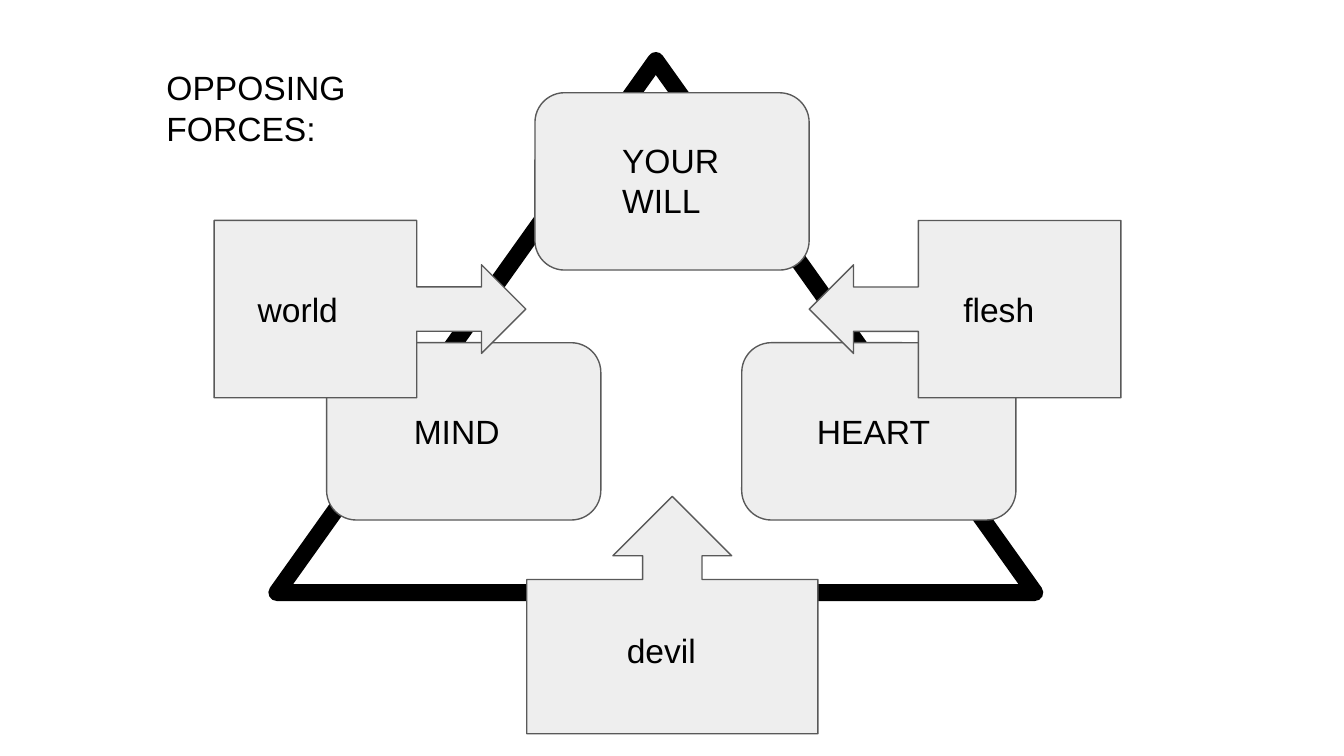
from typing import NamedTuple

from lxml import etree
from pptx import Presentation
from pptx.dml.color import RGBColor
from pptx.enum import shapes, text
from pptx.oxml import ns
from pptx.util import Pt

BLACK, WHITE, PALE, GREY = "000000", "FFFFFF", "EEEEEE", "595959"
SMALL_LABEL, LARGE_LABEL = 36, 58.3
BOX_WIDTH, BOX_HEIGHT = 146.9, 95
BOX_ROUNDING = [0.167]
CALLOUT_SHAPE = [0.25, 0.25, 0.25, 0.65]
LOWER_TOP, CALLOUT_TOP = 183.6, 118.1
LOWER_LABEL_TOP, SIDE_LABEL_TOP = 213.1, 147.6


class Area(NamedTuple):
    left: float
    top: float
    width: float
    height: float


class Force(NamedTuple):
    area: Area
    rotation: float


class Label(NamedTuple):
    words: str
    area: Area


TRIANGLE = Area(148.3, 32.4, 406.1, 285.1)

WILL_HEART_MIND = [
    Area(left, top, BOX_WIDTH, BOX_HEIGHT)
    for left, top in [(286.6, 49.7), (397.4, LOWER_TOP), (175, LOWER_TOP)]
]

SELF_LABELS = [
    Label("YOUR WILL", Area(326.2, 67.7, 67, LARGE_LABEL)),
    Label("MIND", Area(214.6, LOWER_LABEL_TOP, 67, SMALL_LABEL)),
    Label("HEART", Area(430.6, LOWER_LABEL_TOP, 81.4, SMALL_LABEL)),
]

FORCES = [
    Force(Area(114.7, CALLOUT_TOP, 167, BOX_HEIGHT), 0),
    Force(Area(433.5, CALLOUT_TOP, 167, BOX_HEIGHT), 180),
    Force(Area(296.6, 251.5, 127.2, 156), 270),
]

FORCE_LABELS = [
    Label("world", Area(131, SIDE_LABEL_TOP, 91.4, SMALL_LABEL)),
    Label("flesh", Area(509, SIDE_LABEL_TOP, 91.4, SMALL_LABEL)),
    Label("devil", Area(328.7, 330.5, 62.6, SMALL_LABEL)),
    Label("OPPOSING\nFORCES:", Area(82.1, 28.8, 140.4, LARGE_LABEL)),
]


def colour(hex_code: str) -> RGBColor:
    return RGBColor.from_string(hex_code)


def draw_shape(slide, kind, area: Area, adjustments: list[float],
               fill: str = PALE, line: str = GREY, weight: float = 0.75):
    shape = slide.shapes.add_shape(kind, *map(Pt, area))
    for index, value in enumerate(adjustments):
        shape.adjustments[index] = value
    shape.shadow.inherit = False
    shape.fill.solid()
    shape.fill.fore_color.rgb = colour(fill)
    shape.line.color.rgb = colour(line)
    shape.line.width = Pt(weight)
    outline = shape.element.spPr.find(ns.qn("a:ln"))
    etree.SubElement(outline, ns.qn("a:round"))
    return shape


def draw_label(slide, label: Label) -> None:
    frame = slide.shapes.add_textbox(*map(Pt, label.area)).text_frame
    frame_format = {
        "word_wrap": True,
        "auto_size": text.MSO_AUTO_SIZE.SHAPE_TO_FIT_TEXT,
        **{f"margin_{side}": Pt(7.2) for side in ("left", "top", "right", "bottom")},
        "text": label.words,
    }
    for name, value in frame_format.items():
        setattr(frame, name, value)
    for paragraph in frame.paragraphs:
        for run in paragraph.runs:
            for name, value in {"name": "Arial", "size": Pt(18)}.items():
                setattr(run.font, name, value)
            run.font.color.rgb = colour(BLACK)


def main() -> None:
    deck = Presentation()
    deck.slide_width, deck.slide_height = Pt(720), Pt(405)
    slide = deck.slides.add_slide(deck.slide_layouts[6])
    kinds = shapes.MSO_SHAPE

    draw_shape(slide, kinds.ISOSCELES_TRIANGLE, TRIANGLE, [0.5], WHITE, BLACK, 9)
    for area in WILL_HEART_MIND:
        draw_shape(slide, kinds.ROUNDED_RECTANGLE, area, BOX_ROUNDING)
    for label in SELF_LABELS:
        draw_label(slide, label)
    for force in FORCES:
        callout = draw_shape(slide, kinds.RIGHT_ARROW_CALLOUT, force.area, CALLOUT_SHAPE)
        callout.rotation = force.rotation
    for label in FORCE_LABELS:
        draw_label(slide, label)

    deck.save("out.pptx")


if __name__ == "__main__":
    main()
